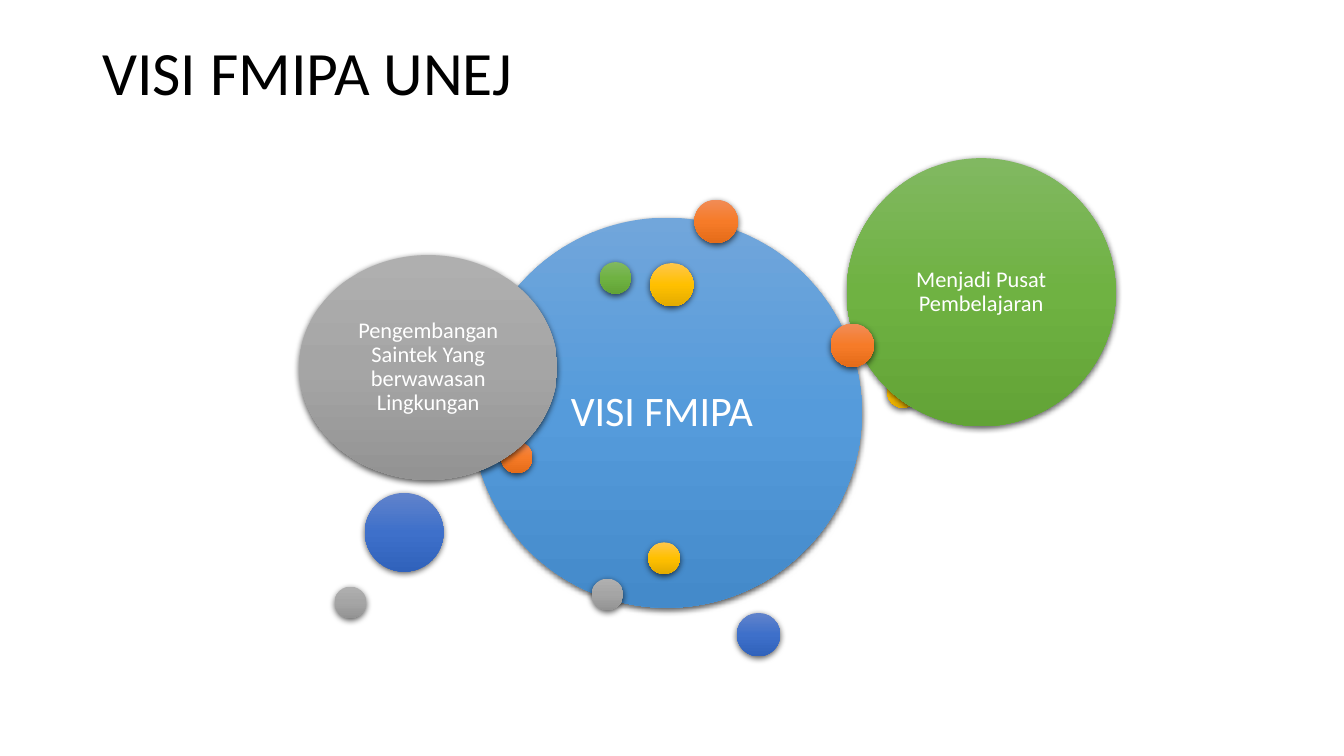
from copy import deepcopy
from pptx import Presentation
from pptx.dml.color import RGBColor as RGB
from pptx.enum.shapes import MSO_SHAPE as Form
from pptx.enum.text import MSO_ANCHOR as Anchor, PP_ALIGN as Align
from pptx.oxml import parse_xml
from pptx.oxml.ns import nsdecls, qn
from pptx.util import Pt

BLACK = RGB(0, 0, 0)
WHITE = RGB(0xFF, 0xFF, 0xFF)
BLUE = RGB(0x71, 0xA6, 0xDB), RGB(0x55, 0x9B, 0xDB), RGB(0x44, 0x8A, 0xCA)
ORANGE = RGB(0xF1, 0x8C, 0x57), RGB(0xF6, 0x7B, 0x28), RGB(0xE5, 0x6C, 0x19)
GREY = RGB(0xAF, 0xAF, 0xAF), RGB(0xA5, 0xA5, 0xA5), RGB(0x93, 0x93, 0x93)
GOLD = RGB(0xFF, 0xC6, 0x4B), RGB(0xFF, 0xC0, 0x00), RGB(0xE3, 0xAB, 0x00)
NAVY = RGB(0x61, 0x83, 0xCB), RGB(0x3E, 0x70, 0xCA), RGB(0x30, 0x62, 0xBB)
GREEN = RGB(0x81, 0xB8, 0x61), RGB(0x6F, 0xB2, 0x42), RGB(0x62, 0xA3, 0x36)

SMALL, MID, LARGE = 22.6, 31, 56.2
SHADOW = (
    f'<a:outerShdw {nsdecls("a")} blurRad="{Pt(4.5)}" dist="{Pt(1.5)}" '
    'dir="5400000" algn="ctr" rotWithShape="0"><a:srgbClr val="000000">'
    '<a:alpha val="63000"/></a:srgbClr></a:outerShdw>'
)


class Board:
    def __init__(self, slide, font="Calibri"):
        self.shapes = slide.shapes
        self.font = font

    def letter(self, shape, text, size, color, align, inset):
        frame = shape.text_frame
        frame.word_wrap = True
        frame.vertical_anchor = Anchor.MIDDLE
        frame.margin_left = frame.margin_right = Pt(inset)
        frame.margin_top = frame.margin_bottom = Pt(inset)
        frame.text = text
        para = frame.paragraphs[0]
        para.alignment = align
        para.line_spacing = 0.9
        font = para.runs[0].font
        font.name, font.size, font.color.rgb = self.font, Pt(size), color

    def title(self, text, left, top, width, height):
        box = self.shapes.add_textbox(Pt(left), Pt(top), Pt(width), Pt(height))
        self.letter(box, text, 44, BLACK, Align.LEFT, 7.2)

    def ball(self, left, top, width, height, shades):
        ball = self.shapes.add_shape(
            Form.OVAL, Pt(left), Pt(top), Pt(width), Pt(height))
        ball.line.fill.background()
        ball.shadow.inherit = False
        props = ball.element.spPr
        props.find(qn("a:effectLst")).append(parse_xml(SHADOW))
        fill = ball.fill
        fill.gradient()
        fill.gradient_angle = 270
        stops = props.find(qn("a:gradFill")).find(qn("a:gsLst"))
        stops.insert(1, deepcopy(stops[0]))
        for stop, shade, place in zip(fill.gradient_stops, shades, (0, 0.5, 1)):
            stop.color.rgb = shade
            stop.position = place
        return ball

    def dot(self, left, top, size, shades):
        self.ball(left, top, size, size, shades)

    def label(self, text, left, top, width, height, shades, size=16, inset=5):
        ball = self.ball(left, top, width, height, shades)
        self.letter(ball, text, size, WHITE, Align.CENTER, inset)


def main():
    deck = Presentation()
    deck.slide_width, deck.slide_height = Pt(960), Pt(540)
    board = Board(deck.slides.add_slide(deck.slide_layouts[6]))

    board.title("VISI FMIPA UNEJ", 66, 1.5, 828, 104.4)
    board.label("VISI FMIPA ", 337, 155.5, 278.6, 278.6, BLUE, 30, 8.6)
    for dot in (
        (496, 142.6, MID, ORANGE),
        (422.6, 413.3, SMALL, GREY),
        (633.6, 268.6, SMALL, GOLD),
        (526.3, 437.8, MID, NAVY),
        (428.4, 187.2, SMALL, GREEN),
        (357.8, 315.4, SMALL, ORANGE),
    ):
        board.dot(*dot)
    board.label("Pengembangan Saintek Yang berwawasan Lingkungan",
                213.8, 182.2, 184.3, 160.6, GREY)
    board.dot(464.4, 187.9, MID, GOLD)
    board.dot(260.6, 352.1, LARGE, NAVY)
    board.label("Menjadi Pusat Pembelajaran",
                604.8, 113, 192.2, 191.5, GREEN)
    for dot in (
        (593.3, 231.1, MID, ORANGE),
        (239, 419, SMALL, GREY),
        (463, 387.4, SMALL, GOLD),
    ):
        board.dot(*dot)
    deck.save("out.pptx")


if __name__ == "__main__":
    main()
